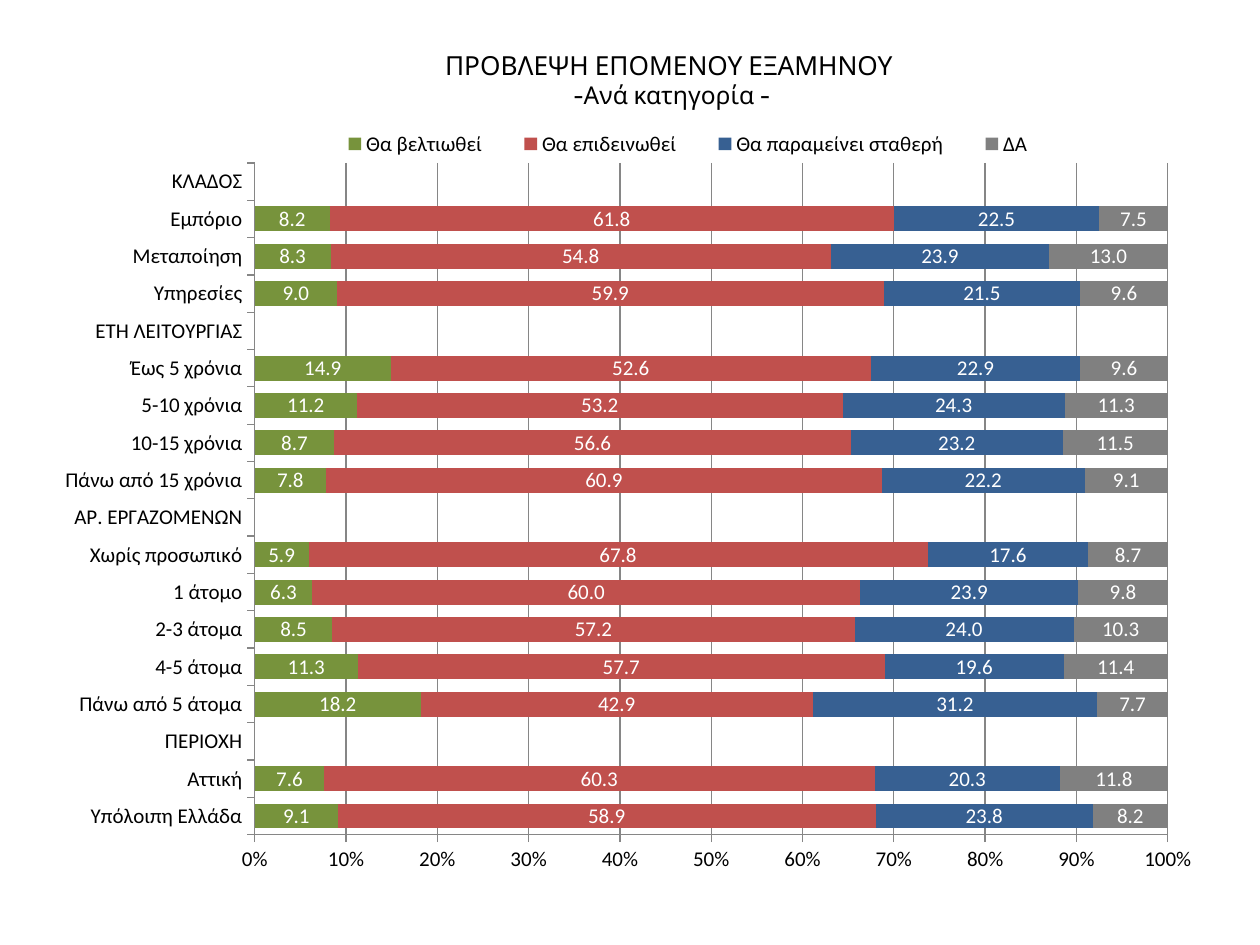
from lxml import etree
from pptx import Presentation
from pptx.chart import data
from pptx.dml import color
from pptx.enum import chart as ch, text
from pptx.oxml import ns
from pptx.util import Inches, Pt

ROWS = [  # label and the four shares, from top to bottom
    ("ΚΛΑΔΟΣ",),
    ("Εμπόριο", 8.2, 61.8, 22.5, 7.5),
    ("Μεταποίηση", 8.3, 54.8, 23.9, 13.0),
    ("Υπηρεσίες", 9.0, 59.9, 21.5, 9.6),
    ("ΕΤΗ ΛΕΙΤΟΥΡΓΙΑΣ",),
    ("Έως 5 χρόνια", 14.9, 52.6, 22.9, 9.6),
    ("5-10 χρόνια", 11.2, 53.2, 24.3, 11.3),
    ("10-15 χρόνια", 8.7, 56.6, 23.2, 11.5),
    ("Πάνω από 15 χρόνια", 7.8, 60.9, 22.2, 9.1),
    ("ΑΡ. ΕΡΓΑΖΟΜΕΝΩΝ",),
    ("Χωρίς προσωπικό", 5.9, 67.8, 17.6, 8.7),
    ("1 άτομο", 6.3, 60.0, 23.9, 9.8),
    ("2-3 άτομα", 8.5, 57.2, 24.0, 10.3),
    ("4-5 άτομα", 11.3, 57.7, 19.6, 11.4),
    ("Πάνω από 5 άτομα", 18.2, 42.9, 31.2, 7.7),
    ("ΠΕΡΙΟΧΗ",),
    ("Αττική", 7.6, 60.3, 20.3, 11.8),
    ("Υπόλοιπη Ελλάδα", 9.1, 58.9, 23.8, 8.2),
]
SERIES = [("Θα βελτιωθεί", "77933C"), ("Θα επιδεινωθεί", "C0504D"),
          ("Θα παραμείνει σταθερή", "376092"), ("ΔΑ", "808080")]


def rgb(code):
    return color.RGBColor.from_string(code)


def style(font, size=12, name="Calibri", tint="000000"):
    font.size, font.name, font.bold = Pt(size), name, False
    font.color.rgb = rgb(tint)


def write(para, words, **form):
    run = para.add_run()
    run.text = words
    style(run.font, **form)


def lay_out(part, spot, *box, inner=False):
    """Set a manual layout, in fractions of the chart, at a child index."""
    for old in part.findall(ns.qn("c:layout")):
        part.remove(old)
    outer = etree.Element(ns.qn("c:layout"))
    manual = etree.SubElement(outer, ns.qn("c:manualLayout"))
    pairs = [("layoutTarget", "inner")] if inner else []
    pairs += [("xMode", "edge"), ("yMode", "edge")]
    pairs += zip("xywh", map(str, box))
    for tag, val in pairs:
        etree.SubElement(manual, ns.qn("c:" + tag)).set("val", val)
    part.insert(spot, outer)


def add_title(slide, left, top, width, height):
    title = slide.shapes.title
    title.left, title.top, title.width, title.height = left, top, width, height
    frame = title.text_frame
    frame.vertical_anchor = text.MSO_ANCHOR.MIDDLE
    frame.auto_size = text.MSO_AUTO_SIZE.NONE
    para = frame.paragraphs[0]
    para.alignment = text.PP_ALIGN.CENTER
    write(para, "ΠΡΟΒΛΕΨΗ ΕΠΟΜΕΝΟΥ ΕΞΑΜΗΝΟΥ", size=15, name="Cabin")
    para.add_line_break()
    write(para, " -Ανά κατηγορία -", size=14, name="Cabin")


def add_bars(slide, left, top, width, height):
    # Bars run upwards, so the rows are fed in reverse
    rows = ROWS[::-1]
    table = data.CategoryChartData(number_format="###0.0")
    table.categories = [row[0] for row in rows]
    for i, (name, _) in enumerate(SERIES, 1):
        table.add_series(name, [row[i] if len(row) > 1 else None for row in rows])
    chart = slide.shapes.add_chart(ch.XL_CHART_TYPE.BAR_STACKED_100,
                                   left, top, width, height, table).chart
    style(chart.font, size=18, name="Cambria")
    chart.has_title = False

    # Series and their labels
    plot = chart.plots[0]
    plot.gap_width, plot.overlap, plot.vary_by_categories = 50, 100, False
    for bars, (_, tint) in zip(plot.series, SERIES):
        bars.format.fill.solid()
        bars.format.fill.fore_color.rgb = rgb(tint)
        labels = bars.data_labels
        labels.show_value = True
        labels.number_format, labels.number_format_is_linked = "###0.0", False
        style(labels.font, tint="FFFFFF")

    # Axes and gridlines
    shares = chart.value_axis
    shares.maximum_scale, shares.major_unit = 1, 0.1
    shares.has_major_gridlines = True
    shares.tick_labels.number_format = "0%"
    shares.tick_labels.number_format_is_linked = False
    lines = [shares.major_gridlines.format.line]
    for axis in (chart.category_axis, shares):
        axis.major_tick_mark = ch.XL_TICK_MARK.OUTSIDE
        style(axis.tick_labels.font)
        lines.append(axis.format.line)
    for line in lines:
        line.width = Pt(0.75)
        line.color.rgb = rgb("868686")

    # Legend in one row above the plot
    chart.has_legend = True
    key = chart.legend
    key.position = ch.XL_LEGEND_POSITION.RIGHT
    key.include_in_layout = False
    style(key.font)
    space = chart.element if hasattr(chart, "element") else chart._chartSpace
    lay_out(space.find(".//" + ns.qn("c:legend")), 1, 0.23, 0, 0.64, 0.05)
    lay_out(space.find(".//" + ns.qn("c:plotArea")), 0,
            0.18, 0.05, 0.78, 0.88, inner=True)


def main():
    deck = Presentation()
    deck.slide_width, deck.slide_height = Inches(10), Inches(7.5)
    slide = deck.slides.add_slide(deck.slide_layouts[0])
    sub = slide.placeholders[1].element
    sub.getparent().remove(sub)
    add_title(slide, Inches(1.25), Inches(0.36), Inches(8.12), Inches(0.54))
    add_bars(slide, Inches(0.35), Inches(0.99), Inches(9.29), Inches(6.06))
    deck.save("out.pptx")


if __name__ == "__main__":
    main()
